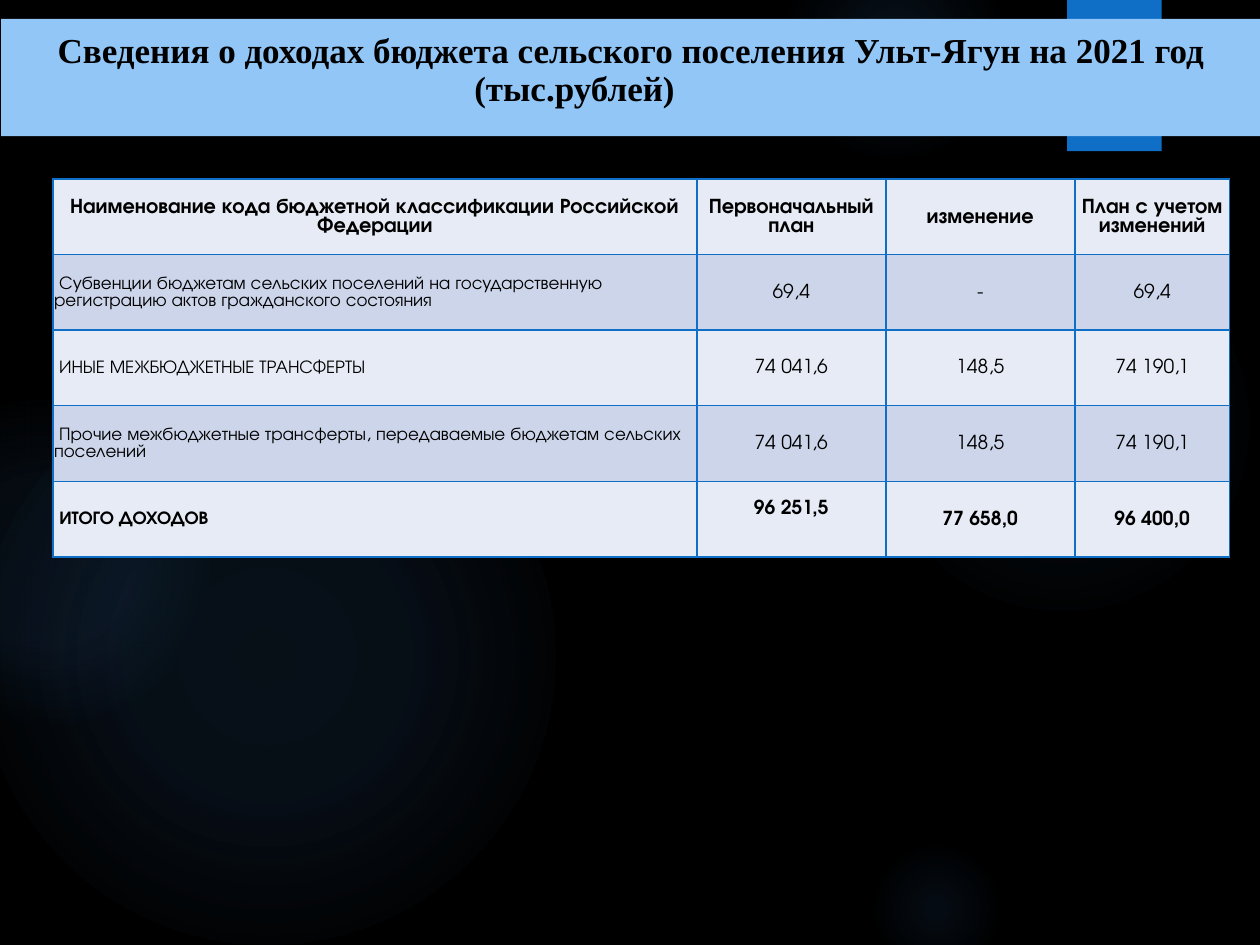
from pptx import Presentation
from pptx import util as u
from pptx.dml.color import RGBColor
from pptx.enum import shapes, text
from pptx.oxml import parse_xml
from pptx.oxml.ns import nsdecls

TITLE = [
    "Сведения о доходах бюджета сельского поселения Ульт-Ягун на 2021 год",
    "(тыс.рублей)",
]
ROWS = [
    ("Наименование кода бюджетной классификации Российской Федерации",
     "Первоначальный план", "изменение", "План с учетом изменений"),
    (" Субвенции бюджетам сельских поселений на государственную регистрацию "
     "актов гражданского состояния", "69,4", "-", "69,4"),
    (" ИНЫЕ МЕЖБЮДЖЕТНЫЕ ТРАНСФЕРТЫ", "74 041,6", "148,5", "74 190,1"),
    (" Прочие межбюджетные трансферты, передаваемые бюджетам сельских "
     "поселений", "74 041,6", "148,5", "74 190,1"),
    (" ИТОГО ДОХОДОВ", "96 251,5", "77 658,0", "96 400,0"),
]
COLUMNS = [5.11, 1.5, 1.5, 1.23]
ROW_HEIGHT = 0.6
RAISED_CELL = (4, 1)

# left, top, diameter, gradient stops as (position %, opacity %)
GLOWS = [
    (6.89, 1.83, 3.08, [(0, 7), (36, 6), (69, 0)]),
    (6.22, -0.5, 1.75, [(0, 14), (36, 7), (73, 0)]),
    (6.89, 6.67, 1.08, [(0, 9), (36, 5), (66, 0)]),
    (-0.17, 2.92, 4.58, [(0, 11), (36, 10), (75, 0)]),
    (-0.92, 3.17, 2.58, [(0, 8), (36, 8), (72, 0)]),
]
THEME = {
    "back": "000000", "ink": "000000", "glow": "448AD7", "accent": "0F6FC6",
    "banner": "91C6F7", "bands": ("E7EBF5", "CCD5EA"),
    "title_font": "Times New Roman", "table_font": "TeX Gyre Adventor",
    "title_size": 20, "head_size": 12, "label_size": 10.5, "value_size": 11,
}


def paint(fill, color):
    fill.solid()
    fill.fore_color.rgb = RGBColor.from_string(color)


def set_font(r, name, size, bold):
    values = {"name": name, "size": u.Pt(size), "bold": bold}
    for key, value in values.items():
        setattr(r.font, key, value)
    r.font.color.rgb = RGBColor.from_string(THEME["ink"])


def set_lengths(target, **lengths):
    for key, value in lengths.items():
        setattr(target, key, u.Inches(value))


def add_plain(slide, kind, *box):
    """Add a preset shape without line or shadow."""
    sp = slide.shapes.add_shape(kind, *map(u.Inches, box))
    sp.shadow.inherit = False
    sp.line.fill.background()
    return sp


def add_glow(slide, left, top, size, stops):
    sp = add_plain(slide, shapes.MSO_SHAPE.OVAL, left, top, size, size)
    marks = "".join(
        f'<a:gs pos="{pos * 1000}"><a:srgbClr val="{THEME["glow"]}">'
        f'<a:alpha val="{alpha * 1000}"/></a:srgbClr></a:gs>'
        for pos, alpha in stops)
    sp._element.spPr.find("{*}prstGeom").addnext(parse_xml(
        f'<a:gradFill {nsdecls("a")} rotWithShape="1"><a:gsLst>{marks}</a:gsLst>'
        '<a:path path="circle"><a:fillToRect l="50000" t="50000" r="50000" '
        'b="50000"/></a:path></a:gradFill>'))


def add_title(slide):
    sp = slide.shapes.title
    set_lengths(sp, left=0.01, top=0.15, width=10, height=0.93)
    sp._element.spPr.append(parse_xml(
        f'<a:prstGeom {nsdecls("a")} prst="roundRect"><a:avLst>'
        '<a:gd name="adj" fmla="val 21700"/></a:avLst></a:prstGeom>'))
    paint(sp.fill, THEME["banner"])
    slide.shapes._spTree.append(sp._element)  # in front of the backdrop

    tf = sp.text_frame
    tf.word_wrap = True
    tf.auto_size = text.MSO_AUTO_SIZE.NONE
    tf.vertical_anchor = text.MSO_ANCHOR.MIDDLE
    set_lengths(tf, margin_left=0.1, margin_right=0.1,
                margin_top=0.05, margin_bottom=0.15)
    tf.text = "\n".join(TITLE)
    for p in tf.paragraphs:
        p.alignment = text.PP_ALIGN.CENTER
        p.line_spacing = 0.9
        p.space_before = u.Pt(0)
        set_font(p.runs[0], THEME["title_font"], THEME["title_size"], True)
    # the unit stands left of the centre
    tf.paragraphs[-1]._p.get_or_add_pPr().set("marR", str(u.Inches(0.9)))


def add_borders(cell):
    for side in ("lnL", "lnR", "lnT", "lnB"):
        cell._tc.get_or_add_tcPr().append(parse_xml(
            f'<a:{side} {nsdecls("a")} w="{u.Pt(1)}"><a:solidFill>'
            f'<a:srgbClr val="{THEME["accent"]}"/></a:solidFill></a:{side}>'))


def fill_cell(cell, i, j, words):
    add_borders(cell)
    paint(cell.fill, THEME["bands"][i % 2])
    cell.vertical_anchor = text.MSO_ANCHOR.MIDDLE
    set_lengths(cell, margin_left=0.01, margin_right=0.01, margin_top=0.01,
                margin_bottom=0.17 if (i, j) == RAISED_CELL else 0)
    cell.text = words
    p = cell.text_frame.paragraphs[0]
    is_label = i > 0 and j == 0
    p.alignment = text.PP_ALIGN.LEFT if is_label else text.PP_ALIGN.CENTER
    kind = "head" if i == 0 else "label" if is_label else "value"
    set_font(p.runs[0], THEME["table_font"], THEME[f"{kind}_size"],
             i in (0, len(ROWS) - 1))


def add_income_table(slide):
    box = (0.42, 1.42, sum(COLUMNS), ROW_HEIGHT * len(ROWS))
    table = slide.shapes.add_table(
        len(ROWS), len(COLUMNS), *map(u.Inches, box)).table
    for column, width in zip(table.columns, COLUMNS):
        column.width = u.Inches(width)
    for i, row in enumerate(ROWS):
        table.rows[i].height = u.Inches(ROW_HEIGHT)
        for j, words in enumerate(row):
            fill_cell(table.cell(i, j), i, j, words)


def main():
    prs = Presentation()
    set_lengths(prs, slide_width=10, slide_height=7.5)
    slide = prs.slides.add_slide(prs.slide_layouts[5])
    paint(slide.background.fill, THEME["back"])
    for glow in GLOWS:
        add_glow(slide, *glow)
    ribbon = add_plain(slide, shapes.MSO_SHAPE.RECTANGLE, 8.47, 0, 0.75, 1.2)
    paint(ribbon.fill, THEME["accent"])
    add_title(slide)
    add_income_table(slide)
    prs.save("out.pptx")


if __name__ == "__main__":
    main()
